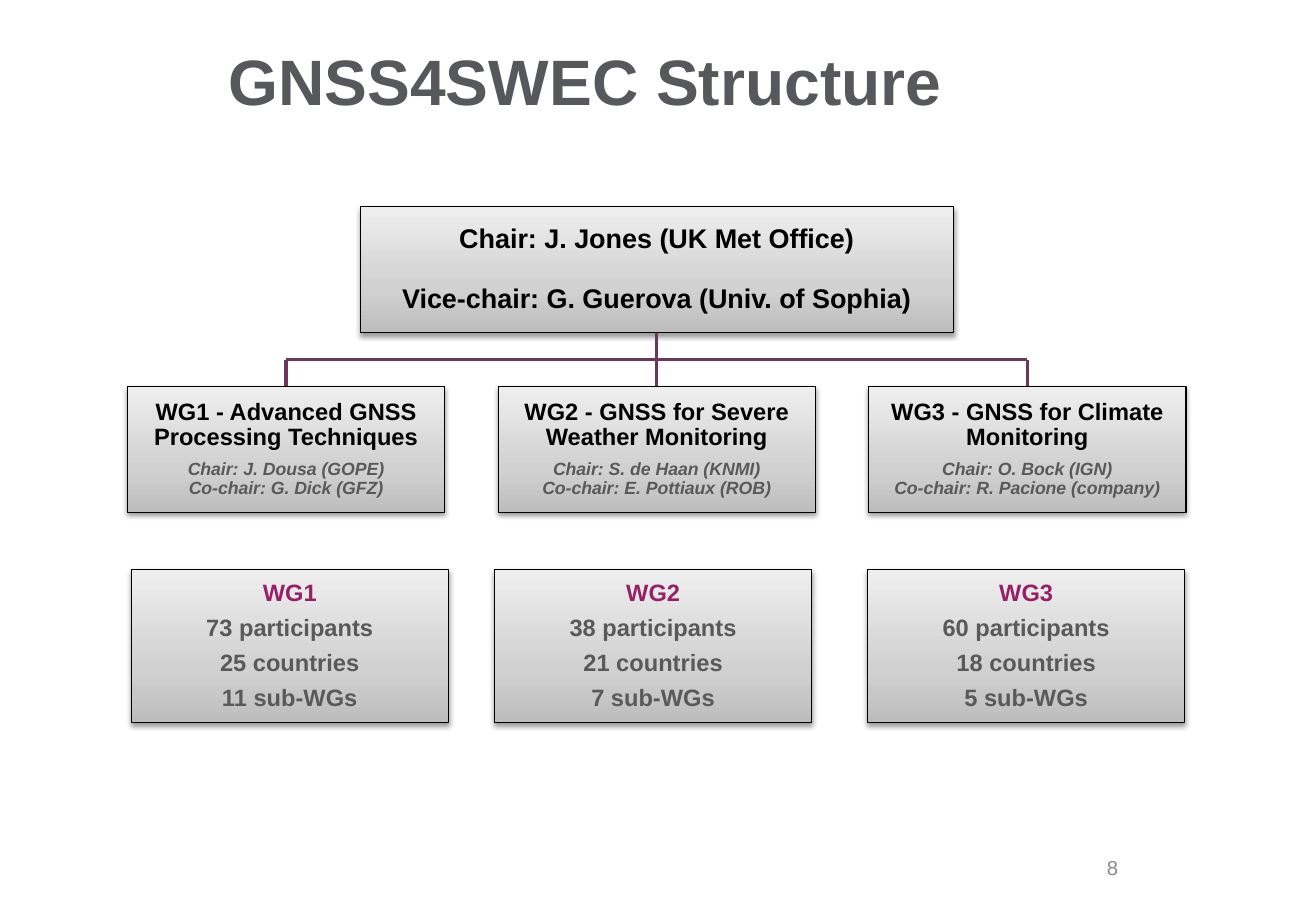
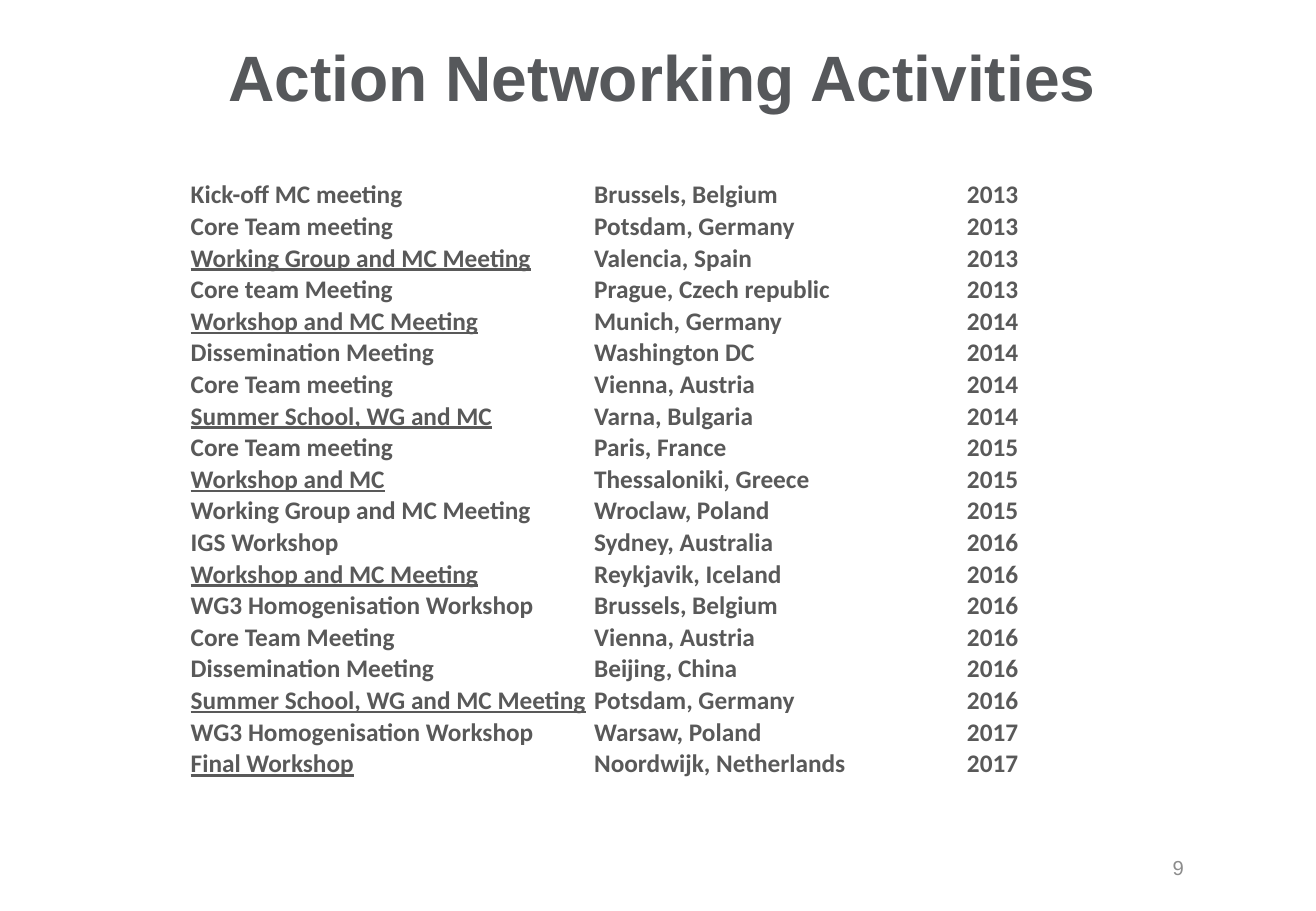
import pptx
import pptx.dml.color
import pptx.enum.shapes
import pptx.enum.text
import pptx.oxml
import pptx.oxml.ns
import pptx.util

RGBColor = pptx.dml.color.RGBColor
Inches, Pt = pptx.util.Inches, pptx.util.Pt
ALIGN, ANCHOR = pptx.enum.text.PP_ALIGN, pptx.enum.text.MSO_ANCHOR
SHAPE, LINE = pptx.enum.shapes.MSO_SHAPE, pptx.enum.shapes.MSO_CONNECTOR
qn, nsdecls = pptx.oxml.ns.qn, pptx.oxml.ns.nsdecls

TITLE_GREY = RGBColor(0x56, 0x58, 0x5B)
TEXT_GREY = RGBColor(0x59, 0x59, 0x59)
NUMBER_GREY = RGBColor(0x8C, 0x8C, 0x8C)
BLACK = RGBColor(0x00, 0x00, 0x00)
MAGENTA = RGBColor(0x96, 0x20, 0x67)
PLUM = RGBColor(0x69, 0x39, 0x5D)
GRADIENT = [
    (0, RGBColor(0xBD, 0xBD, 0xBD)),
    (35, RGBColor(0xD1, 0xD1, 0xD1)),
    (100, RGBColor(0xEE, 0xEE, 0xEE)),
]

SLIDE_W, SLIDE_H = 10.83, 7.5
COL_LEFT, COL_PITCH, BOX_W = 1.05, 3.05, 2.61
CHAIR_W, CHAIR_TOP = 4.88, 1.7
BOX_H, GROUP_TOP = 1.04, 3.18
STATS_TOP, STATS_H = 4.69, 1.26
INSET = 0.01
TABLE_LEFT, TABLE_TOP, ROW_H = 1.56, 1.47, 0.26
TABLE_COLS = [3.32, 2.13, 1.38]

GROUPS = [
    ("WG1 - Advanced GNSS Processing Techniques",
     "Chair: J. Dousa (GOPE)", "Co-chair: G. Dick (GFZ)"),
    ("WG2 - GNSS for Severe Weather Monitoring",
     "Chair: S. de Haan (KNMI)", "Co-chair: E. Pottiaux (ROB)"),
    ("WG3 - GNSS for Climate Monitoring",
     "Chair: O. Bock (IGN)", "Co-chair: R. Pacione (company)"),
]
STATS = [
    (1.08, "WG1", "73 participants", "25 countries", "11 sub-WGs"),
    (4.07, "WG2", "38 participants", "21 countries", "7 sub-WGs"),
    (7.14, "WG3", "60 participants", "18 countries", "5 sub-WGs"),
]
ACTIVITIES = [
    ("Kick-off MC meeting", "Brussels, Belgium", 2013, False),
    ("Core Team meeting", "Potsdam, Germany", 2013, False),
    ("Working Group and MC Meeting", "Valencia, Spain", 2013, True),
    ("Core team Meeting", "Prague, Czech republic", 2013, False),
    ("Workshop and MC Meeting", "Munich, Germany", 2014, True),
    ("Dissemination Meeting", "Washington DC", 2014, False),
    ("Core Team meeting", "Vienna, Austria", 2014, False),
    ("Summer School, WG and MC", "Varna, Bulgaria", 2014, True),
    ("Core Team meeting", "Paris, France", 2015, False),
    ("Workshop and MC", "Thessaloniki, Greece", 2015, True),
    ("Working Group and MC Meeting", "Wroclaw, Poland", 2015, False),
    ("IGS Workshop", "Sydney, Australia", 2016, False),
    ("Workshop and MC Meeting", "Reykjavik, Iceland", 2016, True),
    ("WG3 Homogenisation Workshop", "Brussels, Belgium", 2016, False),
    ("Core Team Meeting", "Vienna, Austria", 2016, False),
    ("Dissemination Meeting", "Beijing, China", 2016, False),
    ("Summer School, WG and MC Meeting", "Potsdam, Germany", 2016, True),
    ("WG3 Homogenisation Workshop", "Warsaw, Poland", 2017, False),
    ("Final Workshop", "Noordwijk, Netherlands", 2017, True),
]


def write(tf, text, size=14, color=TEXT_GREY, font="Arial", bold=True, italic=False,
          underline=False, align=ALIGN.LEFT, spacing=1.0, before=0, after=0):
    """Add one formatted paragraph, filling the first one if it is empty."""
    p = tf.paragraphs[0]
    if p.runs:
        p = tf.add_paragraph()
    p.alignment, p.line_spacing = align, spacing
    p.space_before, p.space_after = Pt(before), Pt(after)
    r = p.add_run()
    r.text = text
    r.font.name, r.font.size, r.font.color.rgb = font, Pt(size), color
    r.font.bold, r.font.italic, r.font.underline = bold, italic, underline


def add_slide(prs, title, title_top, number, number_left):
    """Add a slide with its title and page number."""
    s = prs.slides.add_slide(prs.slide_layouts[5])
    sp = s.shapes.title
    sp.left, sp.top = Inches(1.78), Inches(title_top)
    sp.width, sp.height = Inches(8.75), Inches(0.93)
    tf = sp.text_frame
    tf.auto_size = pptx.enum.text.MSO_AUTO_SIZE.NONE
    tf.vertical_anchor, tf.margin_top = ANCHOR.TOP, Inches(0.11)
    write(tf, title, size=38, color=TITLE_GREY)
    tf = s.shapes.add_textbox(Inches(number_left), Inches(6.94),
                              Inches(0.68), Inches(0.4)).text_frame
    tf.word_wrap, tf.vertical_anchor = True, ANCHOR.MIDDLE
    write(tf, str(number), size=12, color=NUMBER_GREY, bold=False, align=ALIGN.RIGHT)
    return s


def add_box(s, left, top, width, height):
    """Add a shaded rectangle with a soft shadow below it."""
    sp = s.shapes.add_shape(SHAPE.RECTANGLE, *map(Inches, (left, top, width, height)))
    sp.line.color.rgb, sp.line.width = BLACK, Pt(0.75)
    sp.fill.gradient()
    sp.fill.gradient_angle = 90
    sp.shadow.inherit = False
    spPr = sp._element.spPr
    stops = spPr.find(".//" + qn("a:gsLst"))
    for stop in list(stops):
        stops.remove(stop)
    for share, color in GRADIENT:
        stops.append(pptx.oxml.parse_xml(
            f'<a:gs {nsdecls("a")} pos="{share * 1000}"><a:srgbClr val="{color}"/></a:gs>'))
    spPr.find(qn("a:effectLst")).append(pptx.oxml.parse_xml(
        f'<a:outerShdw {nsdecls("a")} blurRad="{Pt(3.1)}" dist="{Pt(1.6)}" dir="5400000" '
        f'rotWithShape="0"><a:srgbClr val="{BLACK}"><a:alpha val="38000"/></a:srgbClr>'
        '</a:outerShdw>'))
    tf = sp.text_frame
    tf.word_wrap, tf.vertical_anchor = True, ANCHOR.MIDDLE
    tf.margin_left = tf.margin_right = tf.margin_top = tf.margin_bottom = Inches(INSET)
    return sp


def write_box(sp, text, **fmt):
    """Add a centred, tightly set paragraph to a box."""
    write(sp.text_frame, text, align=ALIGN.CENTER, spacing=0.9, **fmt)


def add_line(s, x1, y1, x2, y2, start=None, end=None):
    """Add a plum line, joined to the bottom of start and the top of end."""
    c = s.shapes.add_connector(LINE.STRAIGHT, *map(Inches, (x1, y1, x2, y2)))
    c.line.color.rgb, c.line.width = PLUM, Pt(2)
    c._element.spPr.append(pptx.oxml.parse_xml(f'<a:effectLst {nsdecls("a")}/>'))
    if start is not None:
        c.begin_connect(start, 2)
    if end is not None:
        c.end_connect(end, 0)


def add_organisation(s):
    """Draw the chair box, the working groups and the lines between them."""
    lefts = [COL_LEFT + i * COL_PITCH for i in range(len(GROUPS))]
    centers = [left + BOX_W / 2 for left in lefts]
    chair = add_box(s, centers[1] - CHAIR_W / 2, CHAIR_TOP, CHAIR_W, BOX_H)
    write_box(chair, "Chair: J. Jones (UK Met Office)", size=16, color=BLACK)
    write_box(chair, "Vice-chair: G. Guerova (Univ. of Sophia)",
              size=16, color=BLACK, before=18)
    boxes = []
    for left, (name, head, deputy) in zip(lefts, GROUPS):
        sp = add_box(s, left, GROUP_TOP, BOX_W, BOX_H)
        write_box(sp, name, color=BLACK, after=5.6)
        write_box(sp, head, size=10.5, italic=True)
        write_box(sp, deputy, size=10.5, italic=True, after=4.2)
        boxes.append(sp)
    chair_bottom = CHAIR_TOP + BOX_H
    bar_y = (chair_bottom + GROUP_TOP) / 2
    add_line(s, centers[0], bar_y, centers[2], bar_y)
    add_line(s, centers[1], chair_bottom, centers[1], GROUP_TOP, chair, boxes[1])
    for i in (0, 2):
        add_line(s, centers[i], bar_y, centers[i], GROUP_TOP, end=boxes[i])


def add_stats(s):
    """Add one box of figures for each working group."""
    for left, name, *figures in STATS:
        sp = add_box(s, left, STATS_TOP, BOX_W, STATS_H)
        write_box(sp, name, color=MAGENTA, after=5.6)
        for figure in figures:
            write_box(sp, figure, after=5.6)


def add_activities(s):
    """Add the plain table of meetings, places and years."""
    table = s.shapes.add_table(
        len(ACTIVITIES), len(TABLE_COLS), Inches(TABLE_LEFT), Inches(TABLE_TOP),
        Inches(sum(TABLE_COLS)), Inches(ROW_H * len(ACTIVITIES))).table
    table.first_row = table.horz_banding = False
    for column, width in zip(table.columns, TABLE_COLS):
        column.width = Inches(width)
    for i, (activity, place, year, underlined) in enumerate(ACTIVITIES):
        for j, text in enumerate((activity, place, str(year))):
            cell = table.cell(i, j)
            cell.fill.background()
            cell.vertical_anchor = ANCHOR.BOTTOM
            cell.margin_left = cell.margin_right = cell.margin_top = Inches(INSET)
            cell.margin_bottom = 0
            write(cell.text_frame, text, size=15, font="Calibri",
                  underline=underlined and j == 0,
                  align=ALIGN.RIGHT if j == 2 else ALIGN.LEFT)


def main():
    """Build the presentation and save it."""
    prs = pptx.Presentation()
    prs.slide_width, prs.slide_height = Inches(SLIDE_W), Inches(SLIDE_H)
    s = add_slide(prs, "GNSS4SWEC Structure", 0.23, 8, 8.62)
    add_organisation(s)
    add_stats(s)
    s = add_slide(prs, "Action Networking Activities", 0.2, 9, 9.16)
    add_activities(s)
    prs.save("out.pptx")


if __name__ == "__main__":
    main()
